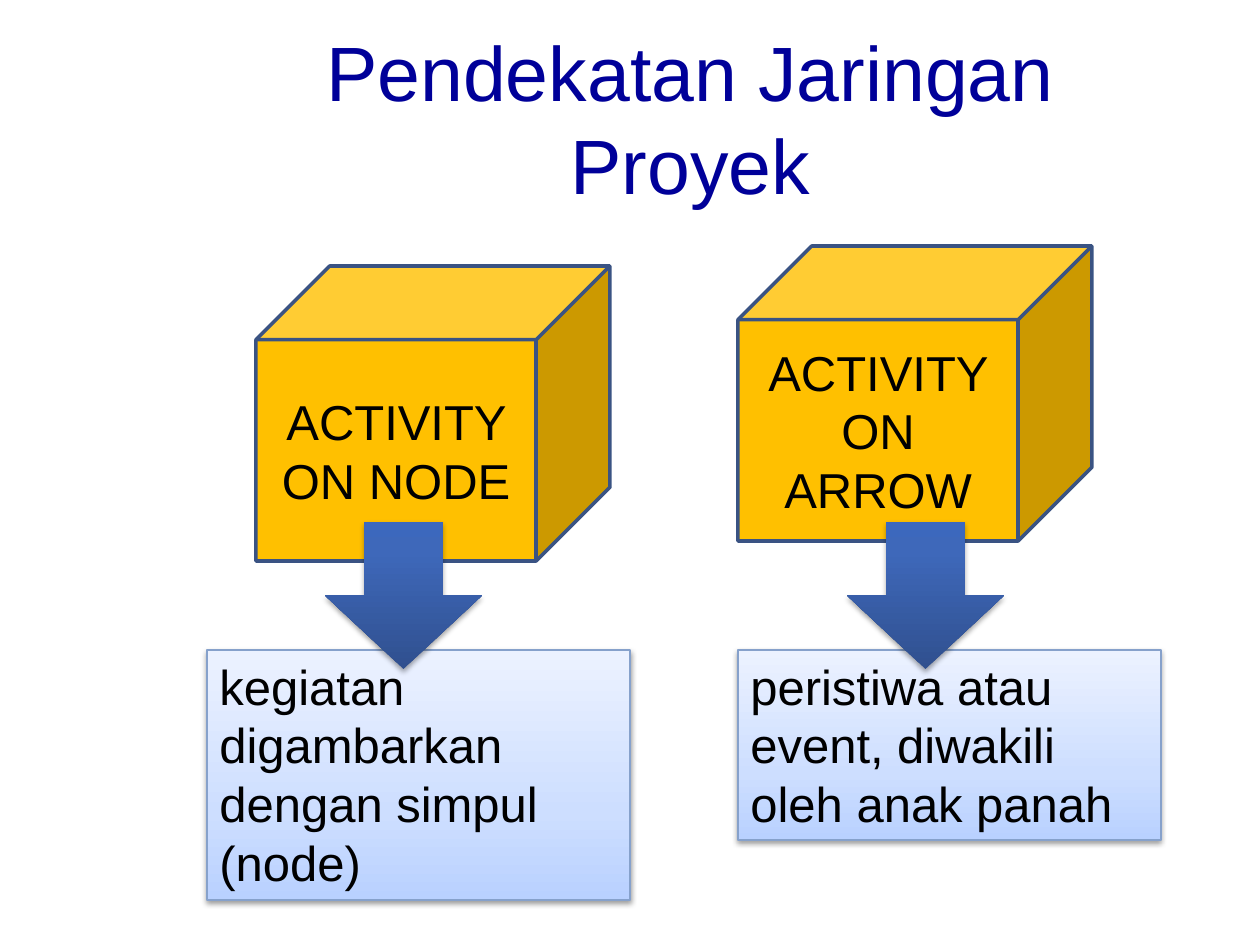
from dataclasses import dataclass

from lxml import etree
from pptx import Presentation, util as u
from pptx.dml.color import RGBColor
from pptx.enum import shapes, text
from pptx.oxml.ns import qn

PX = 914400 // 126  # EMU in one px

TITLE = "Pendekatan Jaringan Proyek"
APPROACHES = [
    {
        "name": "ACTIVITY ON NODE", "cube": (256, 266), "arrow_left": 325,
        "meaning": "kegiatan digambarkan dengan simpul (node)",
        "box_left": 207, "box_height": 250,
    },
    {
        "name": "ACTIVITY ON ARROW", "cube": (738, 246), "arrow_left": 847,
        "meaning": "peristiwa atau event, diwakili oleh anak panah",
        "box_left": 738, "box_height": 190,
    },
]
TITLE_FRAME = (184, 38, 1013, 158)
CUBE_SIZE = (354, 295)
ARROW_TOP, ARROW_SIZE = 522, (157, 147)
BOX_TOP, BOX_WIDTH = 650, 423


@dataclass(frozen=True)
class Theme:
    font: str = "Arial"
    title_size: int = 44
    body_size: int = 28
    title: str = "000099"
    ink: str = "000000"
    cube: str = "FFC000"
    cube_line: str = "3A5383"
    box_line: str = "86A1CB"
    box_stops: tuple = ((0, "B9D1FF"), (35, "CDDEFF"), (100, "ECF2FF"))
    arrow_stops: tuple = ((0, "30508F"), (80, "3E68BA"), (100, "3C68BD"))


THEME = Theme()


def emu(*lengths):
    return [length * PX for length in lengths]


def write(shape, words, size, color, align, anchor):
    frame = shape.text_frame
    frame.word_wrap = True
    frame.vertical_anchor = anchor
    paragraph = frame.paragraphs[0]
    paragraph.alignment = align
    run = paragraph.add_run()
    run.text = words
    run.font.name = THEME.font
    run.font.size = u.Pt(size)
    run.font.color.rgb = RGBColor.from_string(color)


def add_shape(slide, kind, left, top, width, height):
    shape = slide.shapes.add_shape(kind, *emu(left, top, width, height))
    shape.shadow.inherit = False
    return shape


def set_line(shape, color, width):
    shape.line.color.rgb = RGBColor.from_string(color)
    shape.line.width = u.Pt(width)


def add_color(parent, color):
    return etree.SubElement(parent, qn("a:srgbClr"), val=color)


def fill_upward(shape, stops):
    """Fill with a gradient whose first stop lies at the bottom."""
    shape.fill.gradient()
    shape.fill.gradient_angle = 90
    stop_list = shape._element.spPr.find(".//" + qn("a:gsLst"))
    for stop in list(stop_list):
        stop_list.remove(stop)
    for percent, color in stops:
        stop = etree.SubElement(stop_list, qn("a:gs"), pos=str(percent * 1000))
        add_color(stop, color)


def drop_shadow(shape, opacity, distance):
    effects = shape._element.spPr.find(qn("a:effectLst"))
    shadow = etree.SubElement(
        effects, qn("a:outerShdw"), blurRad=str(u.Pt(3.1)),
        dist=str(u.Pt(distance)), dir="5400000", rotWithShape="0")
    color = add_color(shadow, THEME.ink)
    etree.SubElement(color, qn("a:alpha"), val=str(opacity * 1000))


def add_cube(slide, approach):
    cube = add_shape(slide, shapes.MSO_SHAPE.CUBE, *approach["cube"], *CUBE_SIZE)
    cube.fill.solid()
    cube.fill.fore_color.rgb = RGBColor.from_string(THEME.cube)
    set_line(cube, THEME.cube_line, 2)
    write(cube, approach["name"], THEME.body_size, THEME.ink,
          text.PP_ALIGN.CENTER, text.MSO_ANCHOR.MIDDLE)


def add_meaning(slide, approach):
    box = add_shape(slide, shapes.MSO_SHAPE.RECTANGLE, approach["box_left"],
                    BOX_TOP, BOX_WIDTH, approach["box_height"])
    fill_upward(box, THEME.box_stops)
    set_line(box, THEME.box_line, 0.75)
    drop_shadow(box, 38, 1.6)
    write(box, approach["meaning"], THEME.body_size, THEME.ink,
          text.PP_ALIGN.LEFT, text.MSO_ANCHOR.TOP)
    box.text_frame.auto_size = text.MSO_AUTO_SIZE.SHAPE_TO_FIT_TEXT


def add_arrow(slide, approach):
    arrow = add_shape(slide, shapes.MSO_SHAPE.DOWN_ARROW,
                      approach["arrow_left"], ARROW_TOP, *ARROW_SIZE)
    fill_upward(arrow, THEME.arrow_stops)
    arrow.line.fill.background()
    drop_shadow(arrow, 35, 1.8)


def main():
    presentation = Presentation()
    presentation.slide_width, presentation.slide_height = emu(1260, 945)
    slide = presentation.slides.add_slide(presentation.slide_layouts[6])
    title = slide.shapes.add_textbox(*emu(*TITLE_FRAME))
    write(title, TITLE, THEME.title_size, THEME.title,
          text.PP_ALIGN.CENTER, text.MSO_ANCHOR.MIDDLE)
    for add_part in (add_cube, add_meaning, add_arrow):
        for approach in APPROACHES:
            add_part(slide, approach)
    presentation.save("out.pptx")


if __name__ == "__main__":
    main()
